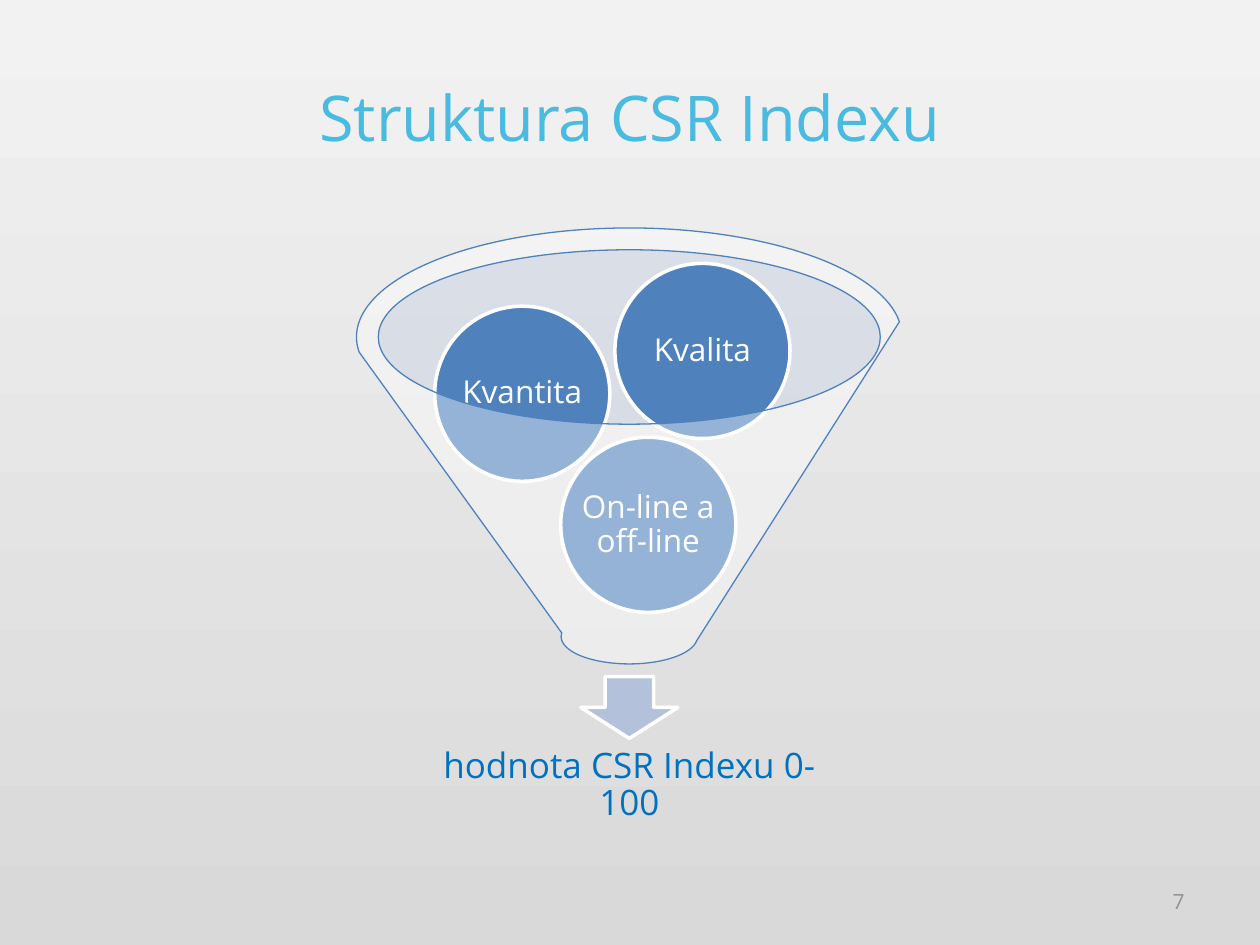
from dataclasses import dataclass

from lxml.etree import SubElement
from pptx import Presentation
from pptx.dml.color import RGBColor
from pptx.enum.shapes import MSO_SHAPE as Shape
from pptx.enum.text import MSO_ANCHOR as Anchor, PP_ALIGN as Align
from pptx.oxml.ns import qn
from pptx.util import Inches, Pt


@dataclass(frozen=True)
class Theme:
    """Colours, font and type sizes of the slide."""
    font: str = "Open Sans"
    back_top: str = "F2F2F2"
    back_bottom: str = "D9D9D9"
    title: str = "49BAE0"
    result: str = "0070C0"
    number: str = "929292"
    ball: str = "4F81BD"
    mouth: str = "C2CDE1"
    arrow: str = "B3C1DB"
    white: str = "FFFFFF"
    title_size: int = 36
    result_size: int = 20
    ball_size: int = 18
    number_size: int = 12


THEME = Theme()


@dataclass(frozen=True)
class Box:
    """A rectangle in inches."""
    left: float
    top: float
    width: float
    height: float

    def inner(self, left, top, width, height):
        """Return a box offset from this one's corner."""
        return Box(self.left + left, self.top + top, width, height)

    def lengths(self):
        """Return the four values as lengths."""
        return [Inches(v) for v in (self.left, self.top, self.width, self.height)]


def add_figure(shapes, kind, box, fill=None, alpha=None, line=None, weight=0):
    """Add a preset shape with a plain fill and outline."""
    figure = shapes.add_shape(kind, *box.lengths())
    figure.shadow.inherit = False
    if fill:
        figure.fill.solid()
        figure.fill.fore_color.rgb = RGBColor.from_string(fill)
    if alpha:
        color = figure.fill._xPr.find(qn("a:solidFill"))[0]
        SubElement(color, qn("a:alpha")).set("val", str(alpha * 1000))
    if line:
        figure.line.color.rgb = RGBColor.from_string(line)
        figure.line.width = Pt(weight)
    else:
        figure.line.fill.background()
    return figure


def add_text(shapes, box, text, size, color, align=Align.CENTER, inset=None, spacing=None):
    """Add a wrapped, vertically centred text box."""
    frame = shapes.add_textbox(*box.lengths()).text_frame
    settings = {"word_wrap": True, "vertical_anchor": Anchor.MIDDLE}
    if inset is not None:
        for side in ("left", "top", "right", "bottom"):
            settings[f"margin_{side}"] = Inches(inset)
    for name, value in settings.items():
        setattr(frame, name, value)
    para = frame.paragraphs[0]
    para.alignment = align
    para.line_spacing = spacing
    span = para.add_run()
    span.text = text
    for name, value in {"name": THEME.font, "size": Pt(size)}.items():
        setattr(span.font, name, value)
    span.font.color.rgb = RGBColor.from_string(color)


def add_backdrop(page, box):
    """Cover the box with a vertical grey gradient."""
    fill = add_figure(page.shapes, Shape.RECTANGLE, box).fill
    fill.gradient()
    fill.gradient_angle = 270
    for stop, color, place in zip(fill.gradient_stops, (THEME.back_top, THEME.back_bottom), (0, 1)):
        stop.color.rgb = RGBColor.from_string(color)
        stop.position = place


def add_ball(shapes, box, text):
    """Add one labelled ball."""
    add_figure(shapes, Shape.OVAL, box, THEME.ball, line=THEME.white, weight=2)
    add_text(shapes, box, text, THEME.ball_size, THEME.white, inset=0.03, spacing=0.9)


def add_funnel(page, box):
    """Draw the funnel with its balls, arrow and result."""
    shapes = page.shapes.add_group_shape().shapes
    add_figure(shapes, Shape.OVAL, box.inner(0.17, 0.17, 3.99, 1.39), THEME.mouth, alpha=40)
    add_figure(shapes, Shape.DOWN_ARROW, box.inner(1.78, 3.56, 0.77, 0.49), THEME.arrow,
               line=THEME.white, weight=2)
    add_text(shapes, box.inner(0.31, 3.96, 3.71, 0.93), "hodnota CSR Indexu 0-100",
             THEME.result_size, THEME.result, inset=0.16, spacing=0.9)
    balls = [("On-line a off-line", 1.62, 1.66), ("Kvantita", 0.62, 0.62), ("Kvalita", 2.05, 0.28)]
    for text, left, top in balls:
        add_ball(shapes, box.inner(left, top, 1.39, 1.39), text)
    add_figure(shapes, Shape.FUNNEL, box.inner(0, 0, box.width, 3.46), THEME.white,
               alpha=40, line=THEME.ball, weight=0.75)


def main():
    """Build the slide and save the deck."""
    deck = Presentation()
    deck.slide_width, deck.slide_height = Inches(10), Inches(7.5)
    page = deck.slides.add_slide(deck.slide_layouts[6])
    add_backdrop(page, Box(0, 0, 10, 7.5))
    add_text(page.shapes, Box(0.5, 0.3, 9, 1.25), "Struktura CSR Indexu",
             THEME.title_size, THEME.title)
    add_funnel(page, Box(2.83, 1.81, 4.33, 4.89))
    add_text(page.shapes, Box(7.17, 6.95, 2.33, 0.4), "7",
             THEME.number_size, THEME.number, Align.RIGHT)
    deck.save("out.pptx")


if __name__ == "__main__":
    main()
